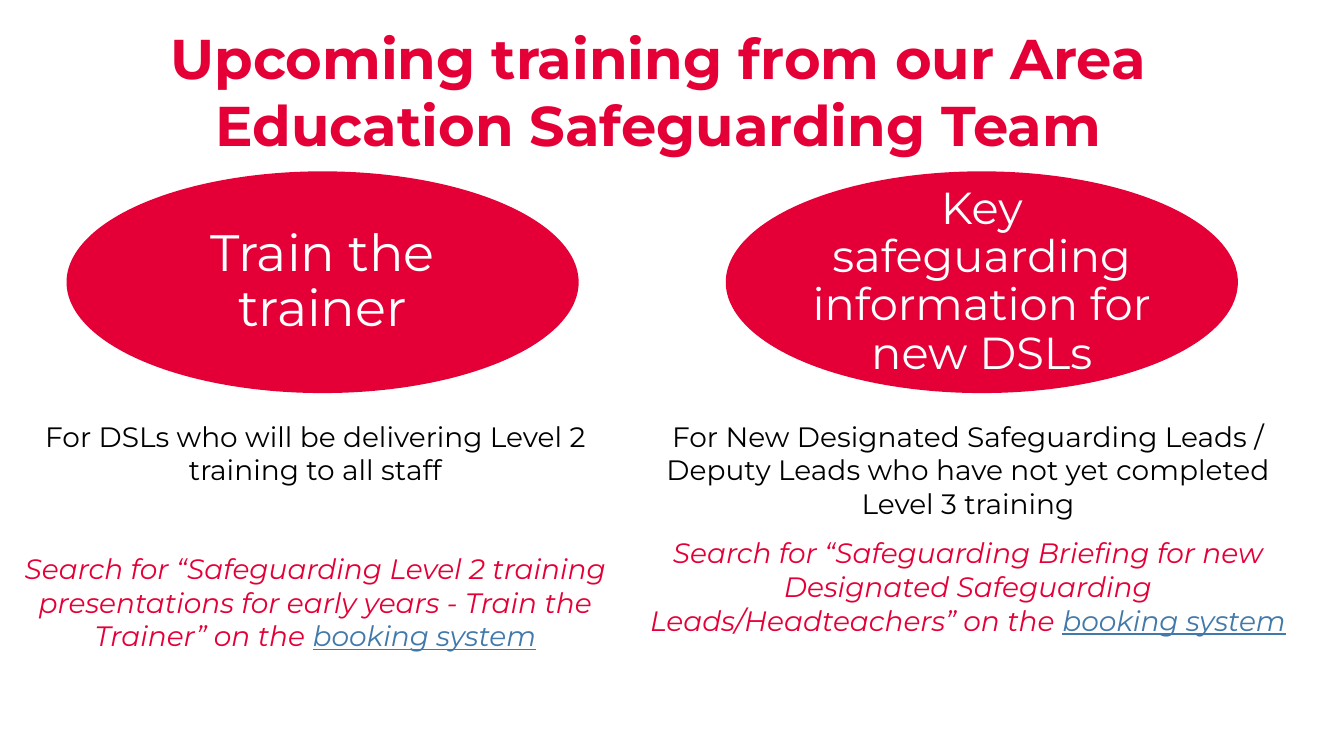
from dataclasses import dataclass

import pptx
import pptx.dml.color
import pptx.enum.shapes
import pptx.enum.text
import pptx.util

Pt = pptx.util.Pt

RED = "E40037"
WHITE = "FFFFFF"
BLACK = "000000"
LINK_BLUE = "4179AA"
FONT = "Montserrat"

ELLIPSE_TOP, ELLIPSE_WIDTH, ELLIPSE_HEIGHT = 122.4, 365.8, 158.4
DETAILS_TOP, DETAILS_HEIGHT, DETAILS_SIZE = 299.5, 108, 20
PARAGRAPH_GAP = 11.3


@dataclass(frozen=True)
class Run:
    text: str
    size: float
    color: str
    bold: bool = False
    italic: bool = False
    underline: bool = False


@dataclass(frozen=True)
class Course:
    name: str
    name_size: float
    ellipse_left: float
    details_left: float
    details_width: float
    audience: str
    audience_gap: float
    search_hint: str


COURSES = [
    Course(
        name="Train the trainer",
        name_size=36.5,
        ellipse_left=47.5,
        details_left=15.1,
        details_width=420.5,
        audience="For DSLs who will be delivering Level 2 training to all staff",
        audience_gap=46.6,
        search_hint="Search for “Safeguarding Level 2 training presentations "
                    "for early years - Train the Trainer” on the ",
    ),
    Course(
        name="Key safeguarding information for new DSLs",
        name_size=32,
        ellipse_left=518.4,
        details_left=458.6,
        details_width=465.8,
        audience="For New Designated Safeguarding Leads / Deputy Leads "
                 "who have not yet completed Level 3 training",
        audience_gap=PARAGRAPH_GAP,
        search_hint="Search for “Safeguarding Briefing for new Designated "
                    "Safeguarding Leads/Headteachers” on the ",
    ),
]


def rgb(color: str) -> pptx.dml.color.RGBColor:
    return pptx.dml.color.RGBColor.from_string(color)


def set_attributes(target: object, values: dict) -> None:
    for name, value in values.items():
        setattr(target, name, value)


def prepare_frame(shape, anchor):
    """Turn on wrapping, remove the margins and return the text frame."""
    frame = shape.text_frame
    set_attributes(frame, {
        "word_wrap": True,
        "vertical_anchor": anchor,
        "margin_left": 0,
        "margin_top": 0,
        "margin_right": 0,
        "margin_bottom": 0,
    })
    return frame


def fill_paragraph(paragraph, runs: list[Run], **paragraph_format) -> None:
    set_attributes(paragraph, {
        "alignment": pptx.enum.text.PP_ALIGN.CENTER,
        **paragraph_format,
    })
    for item in runs:
        run = paragraph.add_run()
        run.text = item.text
        set_attributes(run.font, {
            "name": FONT,
            "size": Pt(item.size),
            "bold": item.bold,
            "italic": item.italic,
            "underline": item.underline,
        })
        run.font.color.rgb = rgb(item.color)


def add_text_box(slide, left: float, top: float, width: float, height: float):
    box = slide.shapes.add_textbox(Pt(left), Pt(top), Pt(width), Pt(height))
    return prepare_frame(box, pptx.enum.text.MSO_ANCHOR.TOP)


def add_title(slide, text: str) -> None:
    frame = add_text_box(slide, 15.1, 16.6, 910, 83.5)
    fill_paragraph(frame.paragraphs[0], [Run(text, 40, RED, bold=True)])


def add_course_ellipse(slide, course: Course) -> None:
    ellipse = slide.shapes.add_shape(
        pptx.enum.shapes.MSO_SHAPE.OVAL,
        Pt(course.ellipse_left), Pt(ELLIPSE_TOP),
        Pt(ELLIPSE_WIDTH), Pt(ELLIPSE_HEIGHT),
    )
    ellipse.shadow.inherit = False
    ellipse.fill.solid()
    ellipse.fill.fore_color.rgb = rgb(RED)
    ellipse.line.fill.background()
    frame = prepare_frame(ellipse, pptx.enum.text.MSO_ANCHOR.MIDDLE)
    fill_paragraph(
        frame.paragraphs[0],
        [Run(course.name, course.name_size, WHITE)],
        line_spacing=0.9,
    )


def add_course_details(slide, course: Course) -> None:
    frame = add_text_box(slide, course.details_left, DETAILS_TOP,
                         course.details_width, DETAILS_HEIGHT)
    fill_paragraph(
        frame.paragraphs[0],
        [Run(course.audience, DETAILS_SIZE, BLACK)],
        space_after=Pt(course.audience_gap),
    )
    fill_paragraph(
        frame.add_paragraph(),
        [
            Run(course.search_hint, DETAILS_SIZE, RED, italic=True),
            Run("booking system", DETAILS_SIZE, LINK_BLUE,
                italic=True, underline=True),
        ],
        space_after=Pt(PARAGRAPH_GAP),
    )


def main() -> None:
    presentation = pptx.Presentation()
    set_attributes(presentation, {
        "slide_width": Pt(960),
        "slide_height": Pt(540),
    })
    slide = presentation.slides.add_slide(presentation.slide_layouts[6])
    add_title(slide, "Upcoming training from the Our Education Safeguarding Team".replace("the Our", "our Area"))
    for course in COURSES:
        add_course_ellipse(slide, course)
        add_course_details(slide, course)
    presentation.save("out.pptx")


if __name__ == "__main__":
    main()
